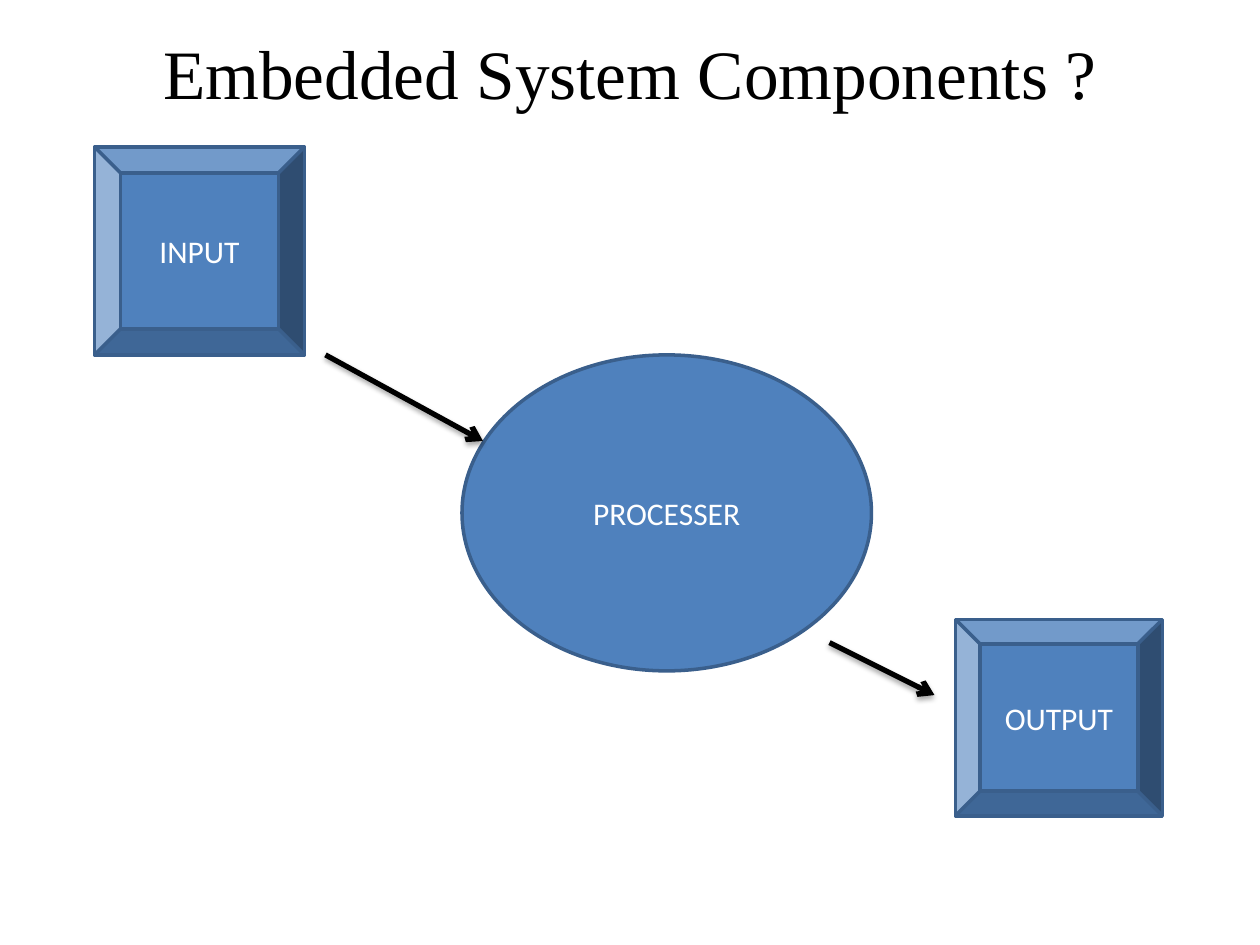
from lxml import etree
from pptx import Presentation
from pptx.dml.color import RGBColor
from pptx.enum.shapes import MSO_CONNECTOR, MSO_SHAPE
from pptx.enum.text import MSO_ANCHOR, PP_ALIGN
from pptx.oxml.ns import qn
from pptx.util import Inches, Pt

BEVEL, ELLIPSE = MSO_SHAPE.BEVEL, MSO_SHAPE.OVAL
STRAIGHT = MSO_CONNECTOR.STRAIGHT
MIDDLE, CENTER = MSO_ANCHOR.MIDDLE, PP_ALIGN.CENTER
TITLE_ONLY = 5

COLORS = {"block": "4F81BD", "border": "3A5F8C", "label": "FFFFFF", "ink": "000000"}

TITLE = "Embedded System Components ?"
TITLE_AREA = (6, 3.6, 108, 6.4)
COMPONENTS = [
    ("INPUT", BEVEL, (9, 14, 20, 19.8)),
    ("OUTPUT", BEVEL, (91, 59, 19.7, 18.7)),
    ("PROCESSER", ELLIPSE, (44, 33.8, 39, 30.1)),
]
ARROWS = [(31, 33.8, 46, 42), (79, 61.2, 89, 66.2)]

TITLE_FONT = {"name": "Times New Roman", "size": Pt(39.6), "bold": False}
LABEL_FONT = {"name": "Calibri", "size": Pt(18), "bold": False}
SHADOW = {"blurRad": Pt(3.1), "dist": Pt(1.8), "dir": 90 * 60000, "rotWithShape": 0}
SHADOW_ALPHA = 35000

SLIDE_SIZE = (Inches(10), Inches(7.5))
COLUMNS, ROWS = 120, 90


def grid(area):
    cells = (SLIDE_SIZE[0] / COLUMNS, SLIDE_SIZE[1] / ROWS)
    return [round(value * cells[index % 2]) for index, value in enumerate(area)]


def color(name):
    return RGBColor.from_string(COLORS[name])


def write_text(shape, text, font_values, color_name):
    frame = shape.text_frame
    for name, value in {"text": text, "word_wrap": True, "vertical_anchor": MIDDLE}.items():
        setattr(frame, name, value)
    paragraph = frame.paragraphs[0]
    paragraph.alignment = CENTER
    font = paragraph.runs[0].font
    for name, value in font_values.items():
        setattr(font, name, value)
    font.color.rgb = color(color_name)


def format_line(line, color_name, width):
    line.color.rgb = color(color_name)
    line.width = Pt(width)


def add_title(slide):
    title = slide.shapes.title
    for name, value in zip(("left", "top", "width", "height"), grid(TITLE_AREA)):
        setattr(title, name, value)
    write_text(title, TITLE, TITLE_FONT, "ink")


def add_component(slide, label, kind, area):
    shape = slide.shapes.add_shape(kind, *grid(area))
    shape.shadow.inherit = False
    shape.fill.solid()
    shape.fill.fore_color.rgb = color("block")
    format_line(shape.line, "border", 2)
    write_text(shape, label, LABEL_FONT, "label")


def add_arrow(slide, ends):
    arrow = slide.shapes.add_connector(STRAIGHT, *grid(ends))
    format_line(arrow.line, "ink", 3)
    etree.SubElement(arrow.line._get_or_add_ln(), qn("a:tailEnd"), type="arrow")
    effects = etree.SubElement(arrow._element.spPr, qn("a:effectLst"))
    shadow = etree.SubElement(effects, qn("a:outerShdw"))
    for name, value in SHADOW.items():
        shadow.set(name, str(value))
    shade = etree.SubElement(shadow, qn("a:srgbClr"), val=COLORS["ink"])
    etree.SubElement(shade, qn("a:alpha"), val=str(SHADOW_ALPHA))


def main():
    presentation = Presentation()
    presentation.slide_width, presentation.slide_height = SLIDE_SIZE
    slide = presentation.slides.add_slide(presentation.slide_layouts[TITLE_ONLY])
    add_title(slide)
    for label, kind, area in COMPONENTS:
        add_component(slide, label, kind, area)
    for ends in ARROWS:
        add_arrow(slide, ends)
    presentation.save("out.pptx")


if __name__ == "__main__":
    main()
